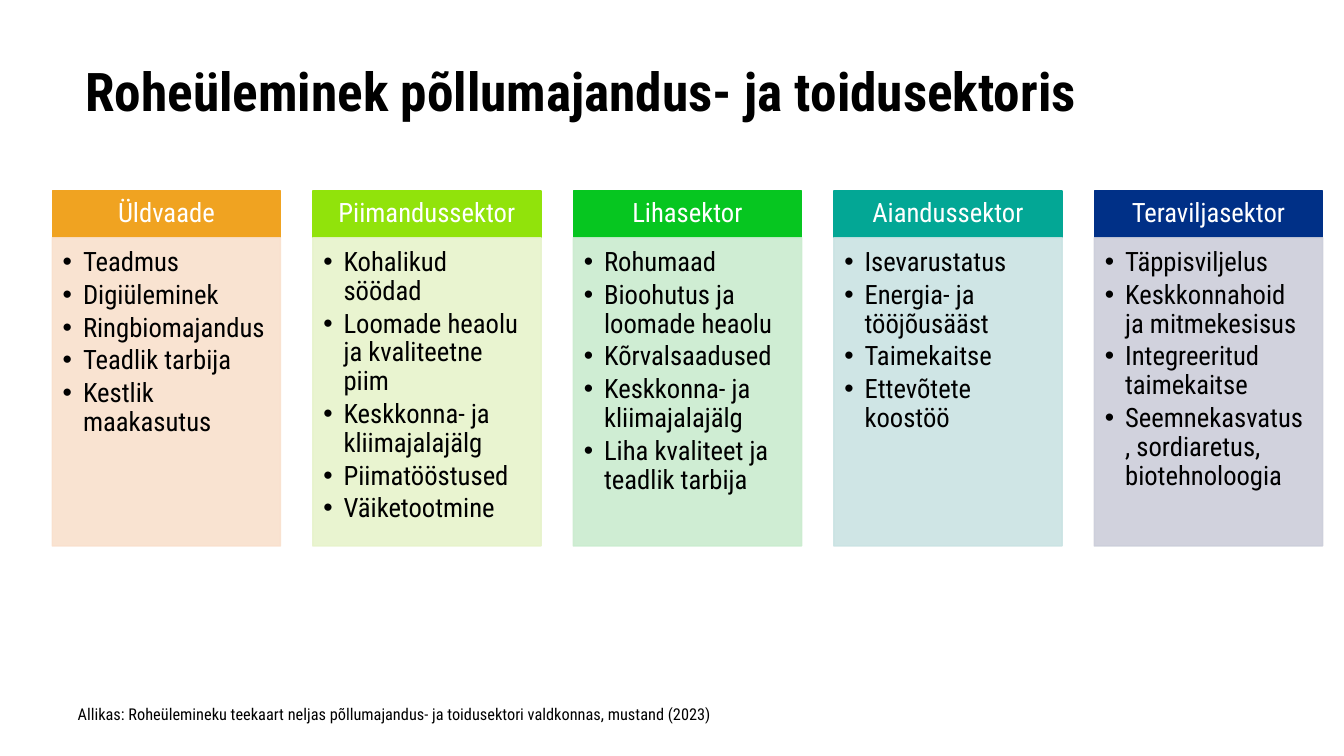
from dataclasses import dataclass

from lxml import etree
from pptx import Presentation
from pptx.dml.color import RGBColor
from pptx.enum.shapes import MSO_SHAPE
from pptx.enum.text import MSO_ANCHOR, MSO_AUTO_SIZE, PP_ALIGN
from pptx.oxml.ns import qn
from pptx.shapes.autoshape import Shape
from pptx.text.text import TextFrame
from pptx.util import Inches, Pt

RECTANGLE = MSO_SHAPE.RECTANGLE
TOP, MIDDLE = MSO_ANCHOR.TOP, MSO_ANCHOR.MIDDLE
LEFT, CENTER = PP_ALIGN.LEFT, PP_ALIGN.CENTER
TITLE_ONLY_LAYOUT = 5


@dataclass(frozen=True)
class Theme:
    font: str = "Roboto Condensed"
    ink: str = "000000"
    heading_ink: str = "FFFFFF"
    title_size: int = 36
    card_size: int = 18
    source_size: int = 11
    body_opacity: int = 90


@dataclass(frozen=True)
class Sector:
    name: str
    accent: str
    tint: str
    topics: tuple[str, ...]


@dataclass(frozen=True)
class Box:
    """A rectangle in inches."""
    left: float
    top: float
    width: float
    height: float

    def emu(self) -> tuple[int, int, int, int]:
        return (Inches(self.left), Inches(self.top),
                Inches(self.width), Inches(self.height))


@dataclass(frozen=True)
class Grid:
    """Equal columns between two edges, each with a heading row and a body row."""
    left: float
    right: float
    top: float
    column_width: float
    heading_height: float
    body_height: float
    columns: int

    def column_left(self, column: int) -> float:
        pitch = (self.right - self.left - self.column_width) / (self.columns - 1)
        return self.left + column * pitch

    def heading(self, column: int) -> Box:
        return Box(self.column_left(column), self.top,
                   self.column_width, self.heading_height)

    def body(self, column: int) -> Box:
        return Box(self.column_left(column), self.top + self.heading_height,
                   self.column_width, self.body_height)


THEME = Theme()
SLIDE_WIDTH, SLIDE_HEIGHT = 12.6, 7.09
TITLE_BOX = Box(0.7, 0.56, 11.09, 1.12)
SOURCE_BOX = Box(0.63, 6.54, 8.58, 0.3)
TITLE = "Roheüleminek põllumajandus- ja toidusektoris"
SOURCE = ("Allikas: Roheülemineku teekaart neljas põllumajandus- ja "
          "toidusektori valdkonnas, mustand (2023)")
SECTORS = (
    Sector("Üldvaade", "F0A321", "F9E0CD", (
        "Teadmus", "Digiüleminek", "Ringbiomajandus", "Teadlik tarbija",
        "Kestlik maakasutus")),
    Sector("Piimandussektor", "91E30B", "E7F3CB", (
        "Kohalikud söödad", "Loomade heaolu ja kvaliteetne piim",
        "Keskkonna- ja kliimajalajälg", "Piimatööstused", "Väiketootmine")),
    Sector("Lihasektor", "06C620", "CAECCF", (
        "Rohumaad", "Bioohutus ja loomade heaolu", "Kõrvalsaadused",
        "Keskkonna- ja kliimajalajälg", "Liha kvaliteet ja teadlik tarbija")),
    Sector("Aiandussektor", "03A795", "CAE3E3", (
        "Isevarustatus", "Energia- ja tööjõusääst", "Taimekaitse",
        "Ettevõtete koostöö")),
    Sector("Teraviljasektor", "003087", "CCCEDA", (
        "Täppisviljelus", "Keskkonnahoid ja mitmekesisus",
        "Integreeritud taimekaitse",
        "Seemnekasvatus, sordiaretus, biotehnoloogia")),
)
GRID = Grid(left=0.49, right=12.4, top=1.79, column_width=2.14,
            heading_height=0.44, body_height=2.89, columns=len(SECTORS))


def set_frame(frame: TextFrame, insets: tuple[float, float, float, float],
              anchor: MSO_ANCHOR = TOP) -> None:
    """Wrap the text and set left, top, right and bottom insets in inches."""
    frame.word_wrap = True
    frame.auto_size = MSO_AUTO_SIZE.NONE
    frame.vertical_anchor = anchor
    (frame.margin_left, frame.margin_top,
     frame.margin_right, frame.margin_bottom) = map(Inches, insets)


def write(frame: TextFrame, lines: tuple[str, ...], size: int, color: str,
          spacing: float, align: PP_ALIGN = LEFT, bold: bool = False,
          space_after: float = 0) -> None:
    for index, line in enumerate(lines):
        paragraph = frame.add_paragraph() if index else frame.paragraphs[0]
        paragraph.alignment = align
        paragraph.line_spacing = spacing
        paragraph.space_before = Pt(0)
        paragraph.space_after = Pt(space_after)
        run = paragraph.add_run()
        run.text = line
        run.font.name = THEME.font
        run.font.size = Pt(size)
        run.font.bold = bold
        run.font.color.rgb = RGBColor.from_string(color)


def add_bullets(frame: TextFrame) -> None:
    indent = Inches(0.19)
    for paragraph in frame.paragraphs:
        properties = paragraph._p.get_or_add_pPr()
        properties.set("marL", str(indent))
        properties.set("indent", str(-indent))
        etree.SubElement(properties, qn("a:buFont"), typeface="Arial")
        etree.SubElement(properties, qn("a:buChar"), char="•")


def add_panel(slide, box: Box, color: str) -> Shape:
    panel = slide.shapes.add_shape(RECTANGLE, *box.emu())
    panel.shadow.inherit = False
    panel.fill.solid()
    panel.fill.fore_color.rgb = RGBColor.from_string(color)
    panel.line.color.rgb = RGBColor.from_string(color)
    panel.line.width = Pt(1)
    return panel


def set_opacity(panel: Shape, percent: int) -> None:
    for color in panel._element.spPr.iter(qn("a:srgbClr")):
        etree.SubElement(color, qn("a:alpha"), val=str(percent * 1000))


def add_sector(slide, sector: Sector, column: int) -> None:
    heading = add_panel(slide, GRID.heading(column), sector.accent)
    set_frame(heading.text_frame, (0.14, 0.08, 0.14, 0.08), MIDDLE)
    write(heading.text_frame, (sector.name,), THEME.card_size,
          THEME.heading_ink, 0.9, CENTER)

    topics = add_panel(slide, GRID.body(column), sector.tint)
    set_opacity(topics, THEME.body_opacity)
    set_frame(topics.text_frame, (0.1, 0.1, 0.14, 0.16))
    write(topics.text_frame, sector.topics, THEME.card_size, THEME.ink, 0.9,
          space_after=0.15 * THEME.card_size)
    add_bullets(topics.text_frame)


def add_title(slide) -> None:
    title = slide.shapes.title
    title.left, title.top, title.width, title.height = TITLE_BOX.emu()
    set_frame(title.text_frame, (0.1, 0.06, 0.1, 0.05))
    write(title.text_frame, (TITLE,), THEME.title_size, THEME.ink, 0.88, bold=True)


def add_source(slide) -> None:
    source = slide.shapes.add_textbox(*SOURCE_BOX.emu())
    set_frame(source.text_frame, (0.1, 0.05, 0.1, 0.05))
    write(source.text_frame, (SOURCE,), THEME.source_size, THEME.ink, 1.1)


def main() -> None:
    presentation = Presentation()
    presentation.slide_width = Inches(SLIDE_WIDTH)
    presentation.slide_height = Inches(SLIDE_HEIGHT)
    slide = presentation.slides.add_slide(
        presentation.slide_layouts[TITLE_ONLY_LAYOUT])
    add_title(slide)
    for column, sector in enumerate(SECTORS):
        add_sector(slide, sector, column)
    add_source(slide)
    presentation.save("out.pptx")


if __name__ == "__main__":
    main()
